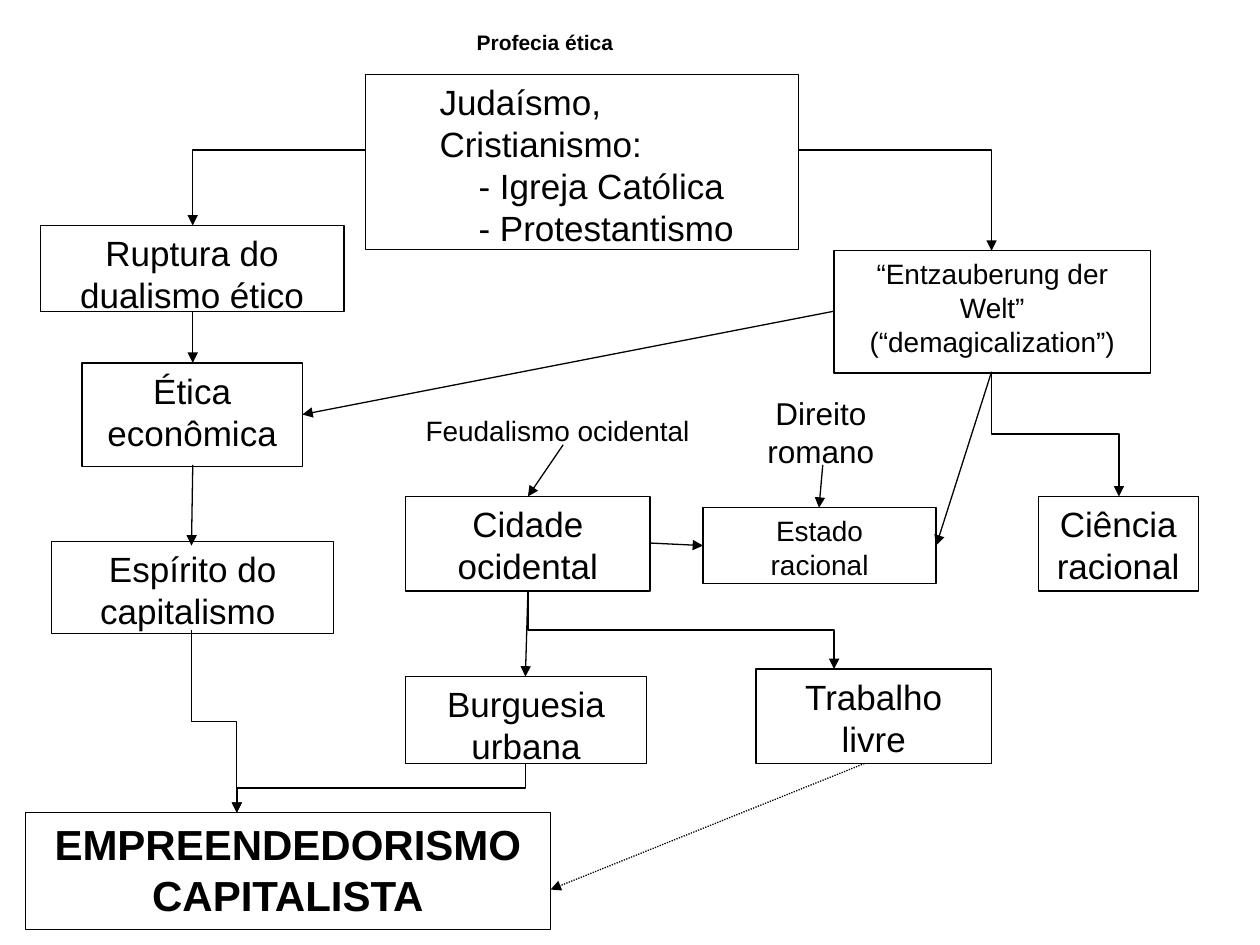
"""Builds the flow chart slide on the origins of capitalist entrepreneurship."""
from lxml.etree import SubElement
from pptx import Presentation
from pptx.dml.color import RGBColor
from pptx.enum.dml import MSO_LINE
from pptx.enum.shapes import MSO_CONNECTOR, MSO_SHAPE
from pptx.enum.text import MSO_ANCHOR, PP_ALIGN
from pptx.oxml.ns import qn
from pptx.util import Inches, Pt

BLACK = RGBColor(0, 0, 0)
WHITE = RGBColor(255, 255, 255)
FONT = "Arial"
CENTER, LEFT = PP_ALIGN.CENTER, PP_ALIGN.LEFT
RECT, ROUND = MSO_SHAPE.RECTANGLE, MSO_SHAPE.ROUNDED_RECTANGLE

BOXES = [
    ((2.9, 0.59, 3.44, 1.39), 20, BLACK, LEFT,
     [("Judaísmo,", 0.49), ("Cristianismo:", 0.49),
      ("- Igreja Católica", 0.8), ("- Protestantismo", 0.8)]),
    ((0.32, 1.79, 2.41, 0.68), 20, BLACK, CENTER, [("Ruptura do dualismo ético", 0)]),
    ((6.62, 1.99, 2.51, 0.97), 16, BLACK, CENTER,
     [("“Entzauberung der Welt” (“demagicalization”)", 0)]),
    ((0.65, 2.88, 1.75, 0.82), 20, BLACK, CENTER, [("Ética econômica", 0)]),
    ((5.58, 4.03, 1.85, 0.6), 16, BLACK, CENTER, [("Estado", 0), ("racional", 0)]),
    ((8.24, 3.94, 1.27, 0.75), 20, BLACK, CENTER, [("Ciência racional", 0)]),
    ((5.83, 3.08, 1.37, 0.65), 18, WHITE, CENTER, [("Direito romano", 0)]),
    ((3.28, 3.23, 2.56, 0.35), 16, None, LEFT, [("Feudalismo ocidental", 0)]),
    ((3.22, 3.94, 1.94, 0.75), 20, BLACK, CENTER, [("Cidade ocidental", 0)]),
    ((0.41, 4.3, 2.24, 0.73), 20, BLACK, CENTER, [("Espírito do capitalismo ", 0)]),
    ((3.22, 5.37, 1.91, 0.69), 20, BLACK, CENTER, [("Burguesia", 0), ("urbana", 0)]),
    ((6, 5.31, 1.87, 0.75), 20, BLACK, CENTER, [("Trabalho livre", 0)]),
]
GOAL = ((0.2, 6.45, 4.17, 0.93), 24, BLACK, CENTER, [("EMPREENDEDORISMO CAPITALISTA", 0)])
TITLE = ((3.39, 0.17, 1.87, 0.28), 12, WHITE, CENTER, [("Profecia ética", 0)])

STRAIGHT_ARROWS = [
    ((1.53, 2.47), (1.53, 2.88)),
    ((6.62, 2.47), (2.4, 3.29)),
    ((7.87, 2.95), (7.43, 4.33)),
    ((6.53, 3.69), (6.5, 4.03)),
    ((4.47, 3.53), (4.19, 3.94)),
    ((5.16, 4.31), (5.58, 4.33)),
    ((1.53, 3.69), (1.52, 4.33)),
    ((4.19, 4.69), (4.17, 5.37)),
]
DOTTED_ARROW = ((6.86, 6.06), (4.37, 7.06))
CORNER_ARROWS = [((2.9, 1.19), (1.53, 1.79)), ((6.34, 1.19), (7.87, 1.99))]
STEP_ARROWS = [
    ((7.87, 2.95), (8.88, 3.94)),
    ((4.19, 4.69), (6.62, 5.31)),
    ((4.17, 6.06), (1.88, 6.45)),
    ((1.52, 5), (1.88, 6.45)),
]


def add_box(s, at, size, outline, align, lines, kind=RECT, bold=False):
    sp = s.shapes.add_shape(kind, *map(Inches, at))
    sp.shadow.inherit = False
    sp.fill.solid()
    sp.fill.fore_color.rgb = WHITE
    if outline is None:
        sp.line.fill.background()
    else:
        sp.line.color.rgb = outline
        sp.line.width = Pt(0.75)
    tf = sp.text_frame
    tf.word_wrap = True
    tf.vertical_anchor = MSO_ANCHOR.TOP
    for i, (text, indent) in enumerate(lines):
        p = tf.add_paragraph() if i else tf.paragraphs[0]
        p.alignment = align
        if indent:
            p._p.get_or_add_pPr().set("indent", str(Inches(indent)))
        r = p.add_run()
        r.text = text
        r.font.name = FONT
        r.font.size = Pt(size)
        r.font.bold = bold
        r.font.color.rgb = BLACK


def add_arrow(s, start, end, kind=MSO_CONNECTOR.STRAIGHT):
    c = s.shapes.add_connector(kind, *map(Inches, (*start, *end)))
    c.line.color.rgb = BLACK
    c.line.width = Pt(0.75)
    SubElement(c.line._get_or_add_ln(), qn("a:tailEnd"), type="triangle")
    SubElement(c._element.spPr, qn("a:effectLst"))
    return c


def add_corner(s, start, end):
    c = add_arrow(s, start, end, MSO_CONNECTOR.ELBOW)
    c._element.spPr.find(qn("a:prstGeom")).set("prst", "bentConnector2")


def add_step(s, start, end):
    (x1, y1), (x2, y2) = start, end
    cx, cy = (x1 + x2) / 2, (y1 + y2) / 2
    side = 1 if x2 > x1 else -1
    dx, dy = side * (y2 - y1) / 2, abs(x2 - x1) / 2
    c = add_arrow(s, (cx + dx, cy - dy), (cx - dx, cy + dy), MSO_CONNECTOR.ELBOW)
    turn = 270 if side > 0 else 90
    c._element.spPr.find(qn("a:xfrm")).set("rot", str(turn * 60000))


def main():
    prs = Presentation()
    prs.slide_width, prs.slide_height = Inches(10), Inches(7.5)
    s = prs.slides.add_slide(prs.slide_layouts[6])
    for box in BOXES:
        add_box(s, *box)
    add_box(s, *GOAL, bold=True)
    for ends in STRAIGHT_ARROWS:
        add_arrow(s, *ends)
    for ends in CORNER_ARROWS:
        add_corner(s, *ends)
    for ends in STEP_ARROWS:
        add_step(s, *ends)
    add_arrow(s, *DOTTED_ARROW).line.dash_style = MSO_LINE.ROUND_DOT
    add_box(s, *TITLE, kind=ROUND, bold=True)
    prs.save("out.pptx")


if __name__ == "__main__":
    main()
